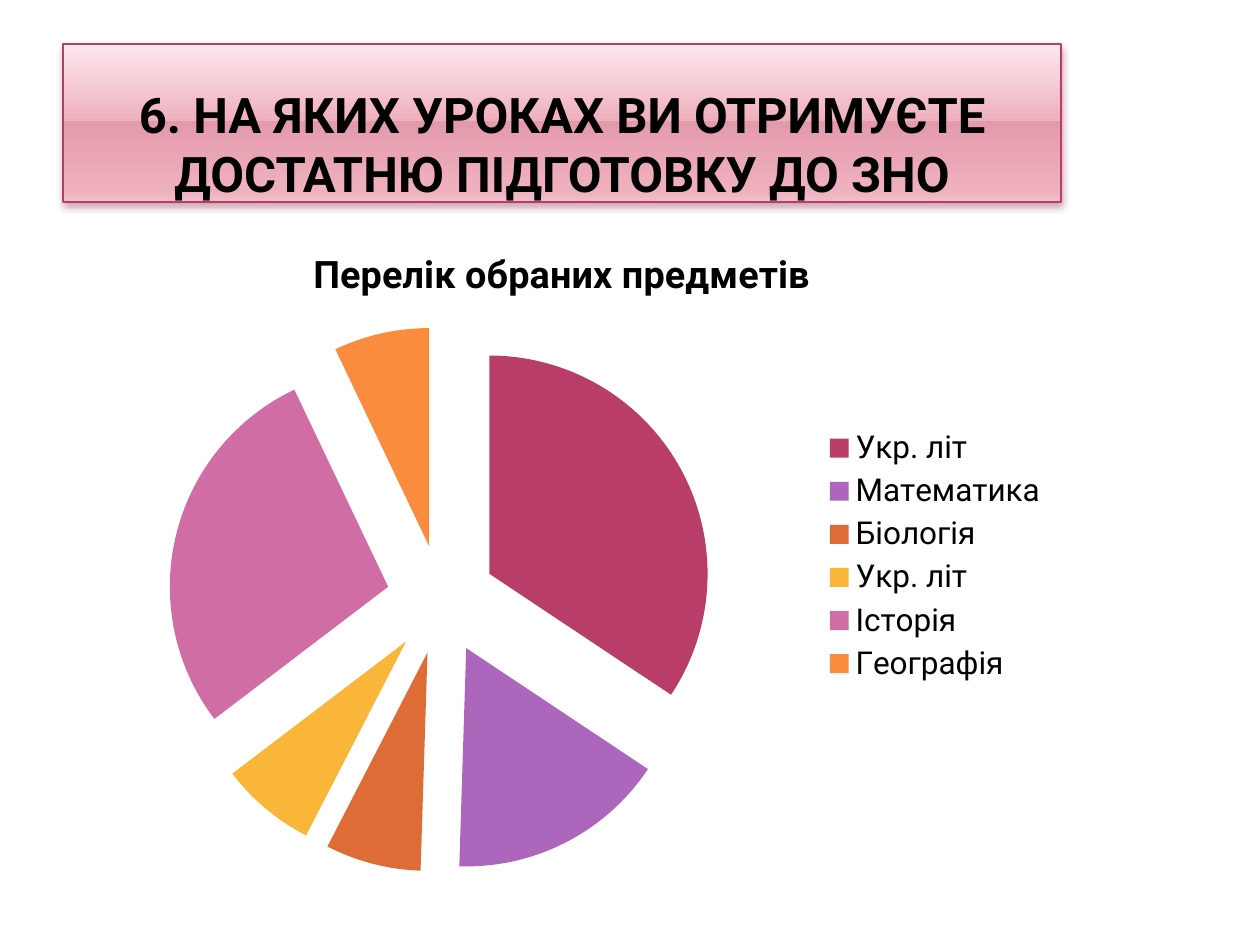
from lxml import etree
from pptx import Presentation
from pptx.chart.data import CategoryChartData
from pptx.dml.color import RGBColor
from pptx.enum.chart import XL_CHART_TYPE as ChartType, XL_LEGEND_POSITION as LegendPosition
from pptx.enum.shapes import MSO_SHAPE as Shape
from pptx.enum.text import MSO_ANCHOR as Anchor, PP_ALIGN as Align
from pptx.oxml import parse_xml
from pptx.oxml.ns import nsdecls, qn
from pptx.util import Inches, Pt

PX = Inches(1) / 126
FONT = "Roboto"
COLORS = {"text": "000000", "border": "B83D68", "shadow": "7F1238"}
BANNER_STOPS = [(0, "FCE8ED"), (49, "EFB0BE"), (49, "E39BAC"), (92, "EFB0BE"), (100, "F0BEC9")]
CHART_TITLE = "Перелік обраних предметів"
SUBJECTS = [
    ("Укр. літ", 34, "B83D68"),
    ("Математика", 16, "AC66BB"),
    ("Біологія", 7, "DE6C36"),
    ("Укр. літ", 7, "F9B639"),
    ("Історія", 28, "CF6DA4"),
    ("Географія", 7, "FA8D3D"),
]


def px(length):
    return round(length * PX)


def set_all(target, values):
    for name, value in values.items():
        setattr(target, name, value)


def set_font(font, size, bold=False):
    set_all(font, {"name": FONT, "size": Pt(size), "bold": bold})
    font.color.rgb = RGBColor.from_string(COLORS["text"])


def add_banner(slide, box, text):
    shape = slide.shapes.add_shape(Shape.RECTANGLE, *map(px, box))
    shape.line.color.rgb = RGBColor.from_string(COLORS["border"])
    shape.line.width = Pt(0.9)

    # Glossy vertical gradient
    shape.fill.gradient()
    shape.fill.gradient_angle = 270
    stops = shape._element.spPr.find(".//" + qn("a:gsLst"))
    for stop in list(stops):
        stops.remove(stop)
    for position, color in BANNER_STOPS:
        stop = etree.SubElement(stops, qn("a:gs"), pos=str(position * 1000))
        etree.SubElement(stop, qn("a:srgbClr"), val=color)

    # Soft shadow below
    shape.shadow.inherit = False
    shape._element.spPr.find(qn("a:effectLst")).append(parse_xml(
        f'<a:outerShdw {nsdecls("a")} blurRad="{Pt(4)}" dist="{Pt(2)}" dir="5400000" rotWithShape="0">'
        f'<a:srgbClr val="{COLORS["shadow"]}"><a:alpha val="38000"/></a:srgbClr></a:outerShdw>'))

    # Heading text
    frame = shape.text_frame
    set_all(frame, {
        "word_wrap": True, "vertical_anchor": Anchor.BOTTOM,
        "margin_left": Inches(0.05), "margin_right": Inches(0.05),
        "margin_top": 0, "margin_bottom": 0,
    })
    paragraph = frame.paragraphs[0]
    paragraph.text = text
    paragraph.alignment = Align.CENTER
    set_font(paragraph.runs[0].font, 28, True)


def add_subject_pie(slide, box):
    data = CategoryChartData()
    data.categories = [name for name, _, _ in SUBJECTS]
    data.add_series(CHART_TITLE, [value for _, value, _ in SUBJECTS])
    chart = slide.shapes.add_chart(ChartType.PIE, *map(px, box), data).chart
    set_font(chart.font, 18)

    # Title and legend
    chart.has_title = True
    title = chart.chart_title.text_frame
    title.text = CHART_TITLE
    set_font(title.paragraphs[0].runs[0].font, 21.6, True)
    chart.has_legend = True
    set_all(chart.legend, {"position": LegendPosition.RIGHT, "include_in_layout": False})

    # Separated, coloured slices
    plot = chart.plots[0]
    plot.vary_by_categories = True
    series = plot.series[0]
    explosion = parse_xml(f'<c:explosion {nsdecls("c")} val="25"/>')
    series._element.find(qn("c:tx")).addnext(explosion)
    for index, (_, _, color) in enumerate(SUBJECTS):
        fill = series.points[index].format.fill
        fill.solid()
        fill.fore_color.rgb = RGBColor.from_string(color)


def main():
    presentation = Presentation()
    set_all(presentation, {"slide_width": Inches(10), "slide_height": Inches(7.5)})
    slide = presentation.slides.add_slide(presentation.slide_layouts[6])
    add_banner(slide, (63, 44, 998, 158),
               "6. НА ЯКИХ УРОКАХ ВИ ОТРИМУЄТЕ ДОСТАТНЮ ПІДГОТОВКУ ДО ЗНО")
    add_subject_pie(slide, (63, 222, 998, 668))
    presentation.save("out.pptx")


if __name__ == "__main__":
    main()
